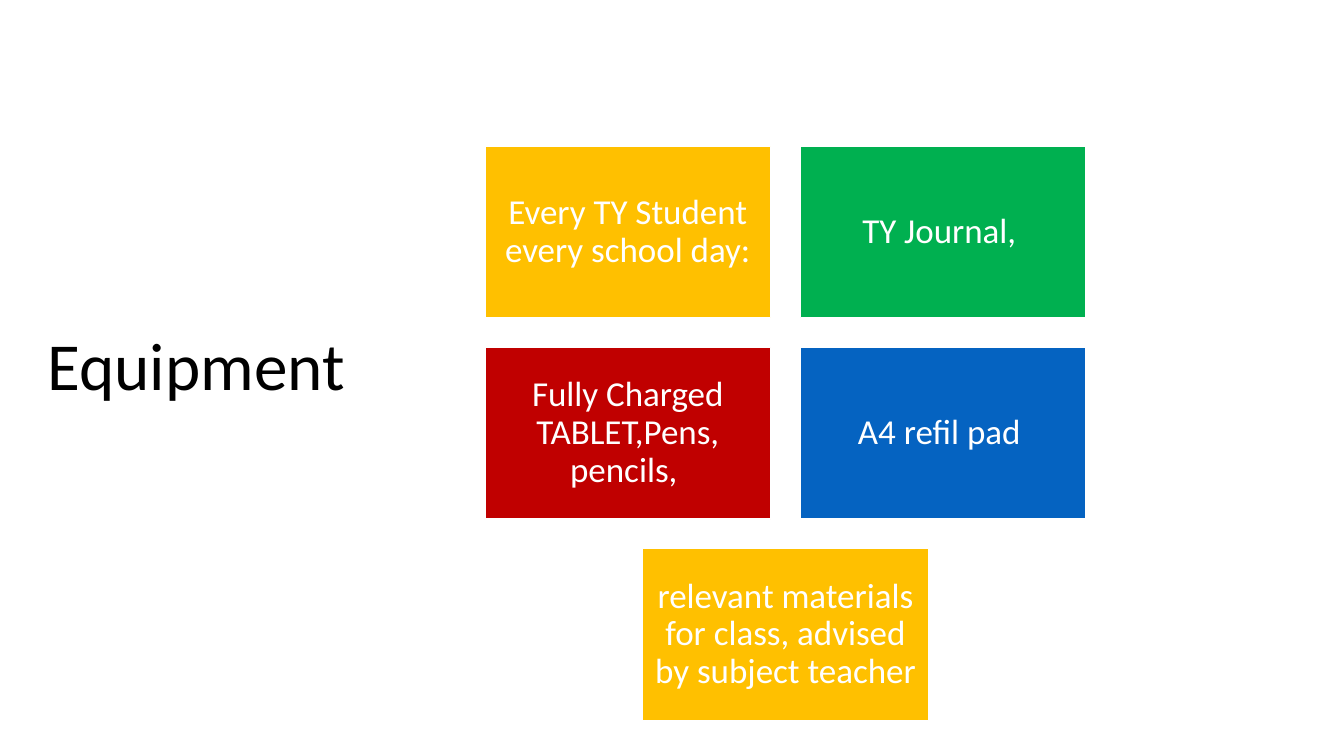
from pptx import Presentation
from pptx import util as u
from pptx.dml.color import RGBColor
from pptx.enum import shapes, text

GOLD = RGBColor(0xFF, 0xC0, 0x00)
GREEN = RGBColor(0x00, 0xB0, 0x50)
RED = RGBColor(0xC0, 0x00, 0x00)
BLUE = RGBColor(0x05, 0x63, 0xC1)
WHITE = RGBColor(0xFF, 0xFF, 0xFF)
BLACK = RGBColor(0x00, 0x00, 0x00)
FONT = "Calibri"

TITLE = "Equipment"
ITEMS = [
    ("Every TY Student every school day:", GOLD),
    ("TY Journal, ", GREEN),
    ("Fully Charged TABLET,Pens, pencils, ", RED),
    ("A4 refil pad ", BLUE),
    ("relevant materials for class, advised by subject teacher", GOLD),
]

# Card grid, in centimetres
COLS = 2
LEFT, TOP = 12.22, 3.69
WIDE, HIGH, GAP = 7.2, 4.32, 0.75
INSET = 0.25


def write(frame, words, size, color, align):
    frame.word_wrap = True
    frame.auto_size = text.MSO_AUTO_SIZE.NONE
    frame.vertical_anchor = text.MSO_ANCHOR.MIDDLE
    para = frame.paragraphs[0]
    para.alignment = align
    para.line_spacing = 0.9
    run = para.add_run()
    run.text = words
    run.font.name = FONT
    run.font.size = u.Pt(size)
    run.font.color.rgb = color


def add_card(slide, left, top, words, color):
    card = slide.shapes.add_shape(
        shapes.MSO_SHAPE.RECTANGLE, u.Cm(left), u.Cm(top), u.Cm(WIDE), u.Cm(HIGH))
    card.shadow.inherit = False
    card.fill.solid()
    card.fill.fore_color.rgb = color
    card.line.color.rgb = WHITE
    card.line.width = u.Pt(1)
    frame = card.text_frame
    frame.margin_left = frame.margin_right = u.Cm(INSET)
    frame.margin_top = frame.margin_bottom = u.Cm(INSET)
    write(frame, words, 25, WHITE, text.PP_ALIGN.CENTER)


def add_cards(slide):
    """Fill rows of cards, with a short last row centred."""
    for start in range(0, len(ITEMS), COLS):
        row = ITEMS[start:start + COLS]
        shift = (COLS - len(row)) * (WIDE + GAP) / 2
        top = TOP + start // COLS * (HIGH + GAP)
        for col, (words, color) in enumerate(row):
            add_card(slide, LEFT + shift + col * (WIDE + GAP), top, words, color)


def main():
    deck = Presentation()
    deck.slide_width, deck.slide_height = u.Cm(33.87), u.Cm(19.05)
    slide = deck.slides.add_slide(deck.slide_layouts[5])
    title = slide.shapes.title
    title.left, title.top = u.Cm(0.94), u.Cm(5.41)
    title.width, title.height = u.Cm(11.94), u.Cm(7.75)
    write(title.text_frame, TITLE, 48, BLACK, text.PP_ALIGN.LEFT)
    add_cards(slide)
    deck.save("out.pptx")


if __name__ == "__main__":
    main()
